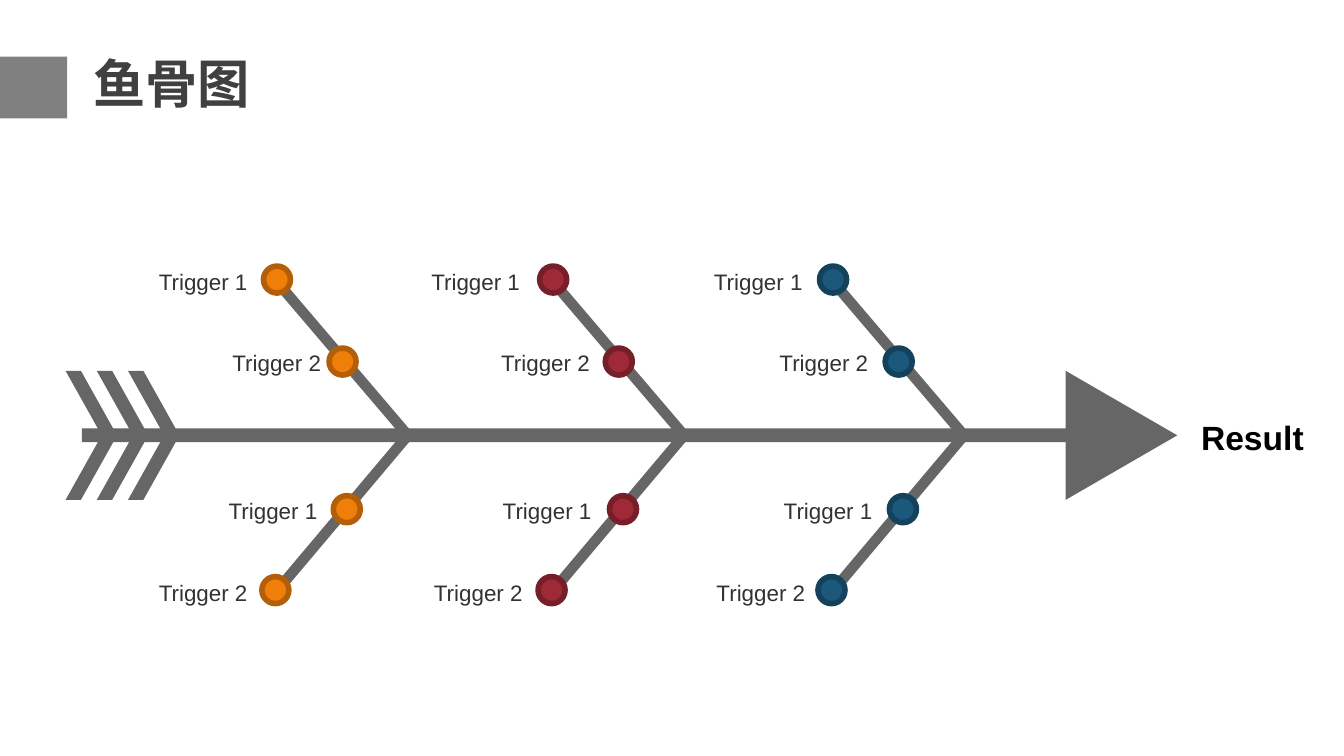
"""Build a fishbone diagram slide with three coloured branches."""
import pptx
import pptx.util
import pptx.dml.color
import pptx.enum.shapes
import pptx.enum.text

Cm = pptx.util.Cm
SHAPE = pptx.enum.shapes.MSO_SHAPE
ALIGN = pptx.enum.text.PP_ALIGN
ANCHOR = pptx.enum.text.MSO_ANCHOR
FIT = pptx.enum.text.MSO_AUTO_SIZE

COLORS = {
    "bone": "666666", "label": "323232", "result": "000000",
    "title": "404040", "accent": "808080",
    "orange": "F07F09", "orange_rim": "B45F07",
    "red": "9F2936", "red_rim": "771F28",
    "blue": "1B587C", "blue_rim": "14425D",
}
TITLE = "鱼骨图"
RESULT = "Result"
BRANCHES = [
    {"x": 4.98, "color": "orange", "label_x": (2.72, 4.11, 4.04, 2.72)},
    {"x": 10.2, "color": "red", "label_x": (7.87, 9.19, 9.22, 7.92)},
    {"x": 15.49, "color": "blue", "label_x": (13.21, 14.45, 14.53, 13.26)},
]
TRIGGERS = [
    {"text": "Trigger 1", "dot": (0, 5.03), "label_y": 4.95},
    {"text": "Trigger 2", "dot": (1.24, 6.58), "label_y": 6.48},
    {"text": "Trigger 1", "dot": (1.32, 9.37), "label_y": 9.27},
    {"text": "Trigger 2", "dot": (-0.03, 10.9), "label_y": 10.82},
]
FORMATS = {
    "label": {"size": pptx.util.Pt(12), "bold": False},
    "result": {"size": pptx.util.Pt(18), "bold": True},
    "title": {"size": pptx.util.Pt(28), "bold": True},
}
AXIS_Y, SHAFT, WING = 8.23, 0.13, 1.22
TAIL_X, HEAD_X, TIP_X = 1.55, 20.14, 22.25
FEATHER_X, FEATHER_W, FEATHER_STEP, FEATHER_SLANT = 1.24, 0.29, 0.59, 0.61
RIB_RISE, RIB_RUN, RIB_W = 3.05, 2.6, 0.26
DOT = 0.51


def rgb(name):
    return pptx.dml.color.RGBColor.from_string(COLORS[name])


def paint(sp, color, rim=None):
    sp.shadow.inherit = False
    sp.fill.solid()
    sp.fill.fore_color.rgb = rgb(color)
    if rim:
        sp.line.color.rgb = rgb(rim)
        sp.line.width = pptx.util.Pt(3)
    else:
        sp.line.fill.background()


def add_outline(shapes, points):
    pts = [(Cm(x), Cm(y)) for x, y in points]
    builder = shapes.build_freeform(*pts[0])
    builder.add_line_segments(pts[1:], close=True)
    paint(builder.convert_to_shape(), "bone")


def add_text(shapes, text, style, box, align=ALIGN.LEFT, wrap=False):
    sp = shapes.add_textbox(*map(Cm, box))
    tf = sp.text_frame
    tf.word_wrap = wrap
    tf.auto_size = FIT.NONE if wrap else FIT.SHAPE_TO_FIT_TEXT
    p = tf.paragraphs[0]
    p.alignment = align
    r = p.add_run()
    r.text = text
    r.font.name = "Arial"
    r.font.color.rgb = rgb(style)
    for key, value in FORMATS[style].items():
        setattr(r.font, key, value)
    return tf


def spine_points():
    upper = [(TAIL_X, -SHAFT)]
    for i in range(3):
        left = FEATHER_X + i * FEATHER_STEP
        right = left + FEATHER_W
        upper += [(left + FEATHER_SLANT, -SHAFT), (left, -WING),
                  (right, -WING), (right + FEATHER_SLANT, -SHAFT)]
    upper += [(HEAD_X, -SHAFT), (HEAD_X, -WING)]
    lower = [(x, -y) for x, y in reversed(upper)]
    return [(x, AXIS_Y + y) for x, y in upper + [(TIP_X, 0)] + lower]


def rib_points(x):
    left = [(x, -RIB_RISE), (x + RIB_RUN, 0), (x + 0.03, RIB_RISE)]
    right = [(px + RIB_W, py) for px, py in reversed(left)]
    return [(px, AXIS_Y + py) for px, py in left + right]


def main():
    prs = pptx.Presentation()
    prs.slide_width, prs.slide_height = Cm(25.4), Cm(14.29)
    shapes = prs.slides.add_slide(prs.slide_layouts[6]).shapes

    add_outline(shapes, spine_points())
    for branch in BRANCHES:
        add_outline(shapes, rib_points(branch["x"]))
    for branch in BRANCHES:
        color = branch["color"]
        for trigger, label_x in zip(TRIGGERS, branch["label_x"]):
            add_text(shapes, trigger["text"], "label",
                     (label_x, trigger["label_y"], 2.21, 0.76), ALIGN.RIGHT)
            dx, y = trigger["dot"]
            dot = shapes.add_shape(SHAPE.OVAL, Cm(branch["x"] + dx), Cm(y), Cm(DOT), Cm(DOT))
            paint(dot, color, color + "_rim")
    add_text(shapes, RESULT, "result", (22.45, 7.75, 2.46, 1.02))

    tf = add_text(shapes, TITLE, "title", (1.52, 0.84, 5.61, 1.6), wrap=True)
    tf.vertical_anchor = ANCHOR.MIDDLE
    tf.paragraphs[0].line_spacing = 0.9
    paint(shapes.add_shape(SHAPE.RECTANGLE, 0, Cm(1.07), Cm(1.27), Cm(1.17)), "accent")
    prs.save("out.pptx")


if __name__ == "__main__":
    main()
